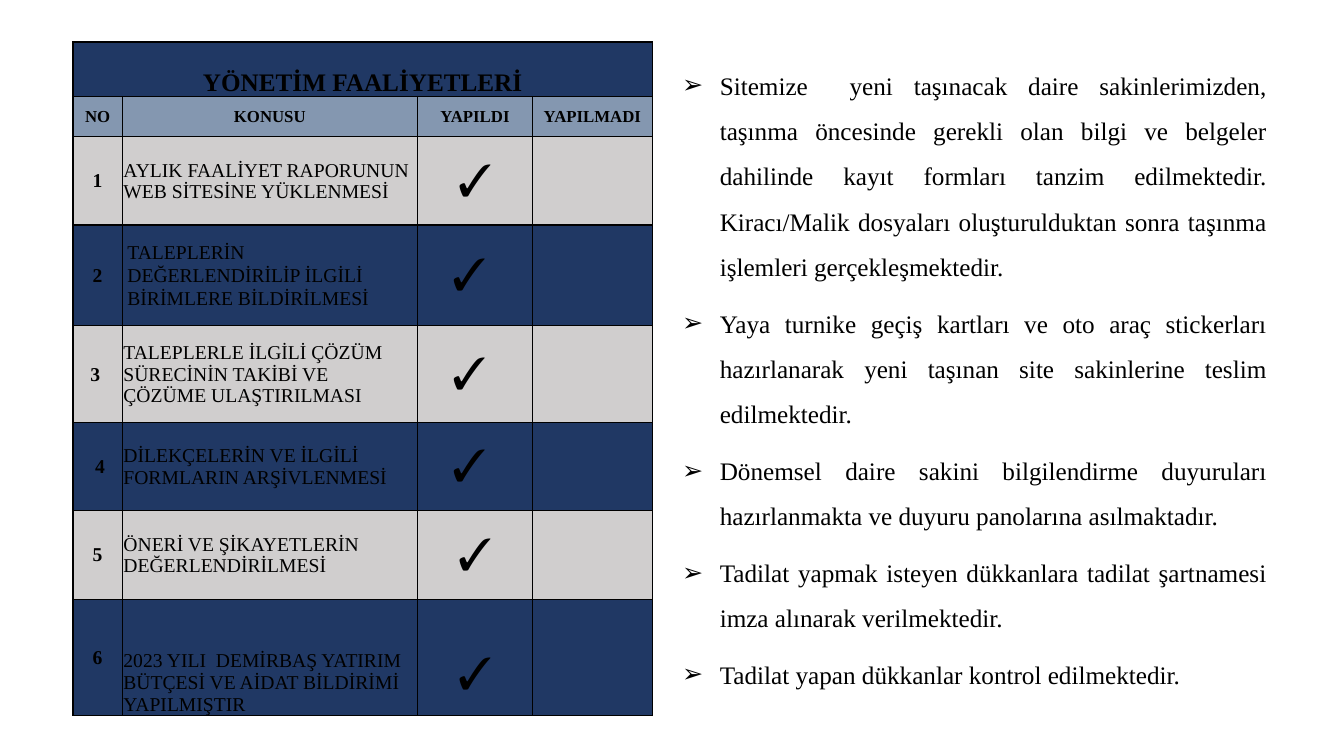
"""Build the slide of management activities: a checklist table beside a bulleted summary."""
from lxml import etree
from pptx import Presentation
from pptx.dml.color import RGBColor
from pptx.enum.text import MSO_ANCHOR, MSO_AUTO_SIZE, PP_ALIGN
from pptx.oxml.ns import qn
from pptx.util import Cm, Pt

BLACK = RGBColor(0x00, 0x00, 0x00)
NAVY = RGBColor(0x20, 0x38, 0x64)
STEEL = RGBColor(0x84, 0x97, 0xB0)
GREY = RGBColor(0xD0, 0xCE, 0xCE)
LEFT, CENTER, JUSTIFY = PP_ALIGN.LEFT, PP_ALIGN.CENTER, PP_ALIGN.JUSTIFY
MIDDLE, BOTTOM = MSO_ANCHOR.MIDDLE, MSO_ANCHOR.BOTTOM
FIT_SHAPE = MSO_AUTO_SIZE.SHAPE_TO_FIT_TEXT
FONT_NAME = "Times New Roman"

COLUMN_WIDTHS = (1.24, 7.44, 2.9, 3.02)
ROW_HEIGHTS = (1.37, 1.01, 2.23, 2.53, 2.44, 2.22, 2.24, 2.93)
HEADERS = ("NO", "KONUSU", "YAPILDI", "YAPILMADI")
TOPICS = (
    "AYLIK FAALİYET RAPORUNUN WEB SİTESİNE YÜKLENMESİ",
    "TALEPLERİN DEĞERLENDİRİLİP İLGİLİ BİRİMLERE BİLDİRİLMESİ",
    "TALEPLERLE İLGİLİ ÇÖZÜM SÜRECİNİN TAKİBİ VE ÇÖZÜME ULAŞTIRILMASI",
    "DİLEKÇELERİN VE İLGİLİ FORMLARIN ARŞİVLENMESİ",
    "ÖNERİ VE ŞİKAYETLERİN DEĞERLENDİRİLMESİ",
    "2023 YILI  DEMİRBAŞ YATIRIM BÜTÇESİ VE AİDAT BİLDİRİMİ YAPILMIŞTIR",
)
ACTIVITIES = (
    "Sitemize  yeni taşınacak daire sakinlerimizden, taşınma öncesinde gerekli olan "
    "bilgi ve belgeler dahilinde kayıt formları tanzim edilmektedir. Kiracı/Malik "
    "dosyaları oluşturulduktan sonra taşınma işlemleri gerçekleşmektedir.",
    "Yaya turnike geçiş kartları ve oto araç stickerları hazırlanarak yeni taşınan "
    "site sakinlerine teslim edilmektedir.",
    "Dönemsel daire sakini bilgilendirme duyuruları hazırlanmakta ve duyuru "
    "panolarına asılmaktadır.",
    "Tadilat yapmak isteyen dükkanlara tadilat şartnamesi imza alınarak verilmektedir.",
    "Tadilat yapan dükkanlar kontrol edilmektedir.",
)
CELL_MARGINS = {"margin_left": 0.03, "margin_right": 0.03, "margin_top": 0.03, "margin_bottom": 0}
WIDE_MARGINS = {"margin_left": 0.13, "margin_right": 0.13, "margin_top": 0}
CHECK_SHIFT = {"margin_right": 0.31}
NUMBER_SHIFTS = {3: {"margin_right": 0.15}, 4: {"margin_left": 0.15}}


def write_paragraph(paragraph, text, size, bold, alignment, line_spacing):
    """Fill one paragraph with formatted black text."""
    paragraph.text = text
    paragraph.alignment = alignment
    paragraph.line_spacing = line_spacing
    font = paragraph.runs[0].font
    for name, value in {"name": FONT_NAME, "size": Pt(size), "bold": bold}.items():
        setattr(font, name, value)
    font.color.rgb = BLACK


def write_cell(cell, text, size, bold=True, alignment=CENTER, anchor=MIDDLE, line_spacing=1.0, margins=None):
    """Fill one table cell, with changes to the usual margins."""
    cell.vertical_anchor = anchor
    for name, value in (CELL_MARGINS | (margins or {})).items():
        setattr(cell, name, Cm(value))
    write_paragraph(cell.text_frame.paragraphs[0], text, size, bold, alignment, line_spacing)


presentation = Presentation()
presentation.slide_width = Cm(33.87)
presentation.slide_height = Cm(19.05)
slide = presentation.slides.add_slide(presentation.slide_layouts[6])

table = slide.shapes.add_table(
    len(ROW_HEIGHTS), len(COLUMN_WIDTHS), Cm(1.84), Cm(1.06),
    Cm(sum(COLUMN_WIDTHS)), Cm(sum(ROW_HEIGHTS)),
).table
for column, width in zip(table.columns, COLUMN_WIDTHS):
    column.width = Cm(width)
for row, height in zip(table.rows, ROW_HEIGHTS):
    row.height = Cm(height)

row_colors = [NAVY, STEEL] + [GREY, NAVY] * 3
for row, row_color in zip(table.rows, row_colors):
    for cell in row.cells:
        properties = cell._tc.get_or_add_tcPr()
        for side in ("a:lnL", "a:lnR", "a:lnT", "a:lnB"):
            border = etree.SubElement(properties, qn(side), w=str(Pt(1)))
            border_fill = etree.SubElement(border, qn("a:solidFill"))
            etree.SubElement(border_fill, qn("a:srgbClr"), val=str(BLACK))
        cell.fill.solid()
        cell.fill.fore_color.rgb = row_color

table.cell(0, 0).merge(table.cell(0, len(HEADERS) - 1))
write_cell(table.cell(0, 0), "YÖNETİM FAALİYETLERİ", 18, anchor=BOTTOM)
for index, header in enumerate(HEADERS):
    write_cell(table.cell(1, index), header, 12)

for number, topic in enumerate(TOPICS, start=1):
    row_index = number + 1
    is_last = number == len(TOPICS)
    is_wide = number == 2
    anchor = BOTTOM if is_last else MIDDLE
    check_margins = CHECK_SHIFT if number in (2, 3, 4) else {}
    if is_last:
        check_margins = {"margin_bottom": 0.41}
    write_cell(table.cell(row_index, 0), str(number), 14, margins=NUMBER_SHIFTS.get(number))
    write_cell(
        table.cell(row_index, 1), topic, 14, bold=False, alignment=LEFT, anchor=anchor,
        line_spacing=1.07 if is_wide else 1.0, margins=WIDE_MARGINS if is_wide else None,
    )
    write_cell(table.cell(row_index, 2), "✓", 32, bold=False, anchor=anchor, margins=check_margins)

summary = slide.shapes.add_textbox(Cm(16.94), Cm(1.26), Cm(15.24), Cm(17.5))
text_frame = summary.text_frame
text_frame.word_wrap = True
text_frame.auto_size = FIT_SHAPE
for index, activity in enumerate(ACTIVITIES):
    paragraph = text_frame.add_paragraph() if index else text_frame.paragraphs[0]
    write_paragraph(paragraph, activity, 18, False, JUSTIFY, 1.5)
    paragraph.space_after = Pt(8)
    properties = paragraph._p.get_or_add_pPr()
    properties.set("marL", str(Cm(0.95)))
    properties.set("indent", str(Cm(-0.95)))
    etree.SubElement(properties, qn("a:buFont"), typeface="Arial")
    etree.SubElement(properties, qn("a:buChar"), char="➢")

presentation.save("out.pptx")
